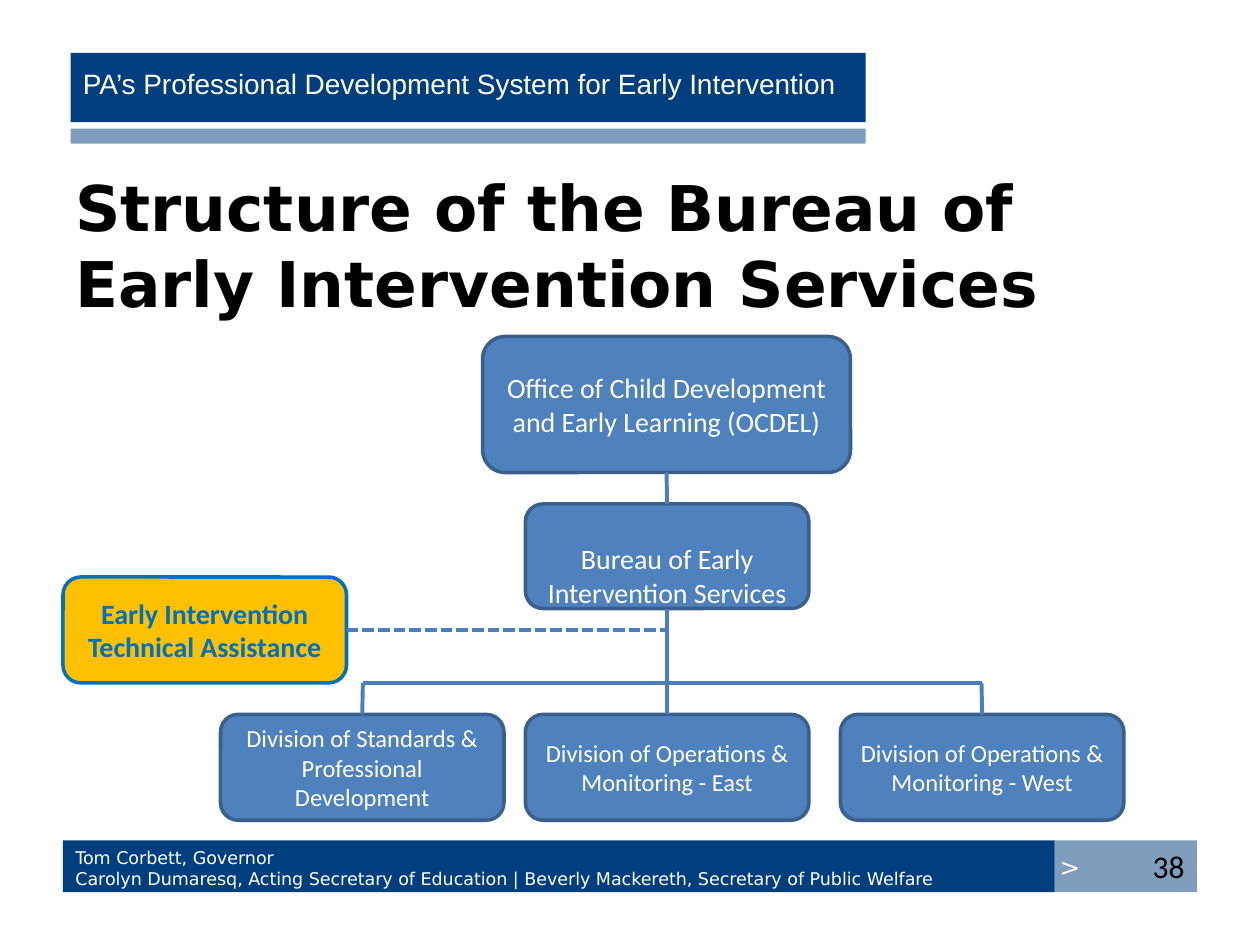
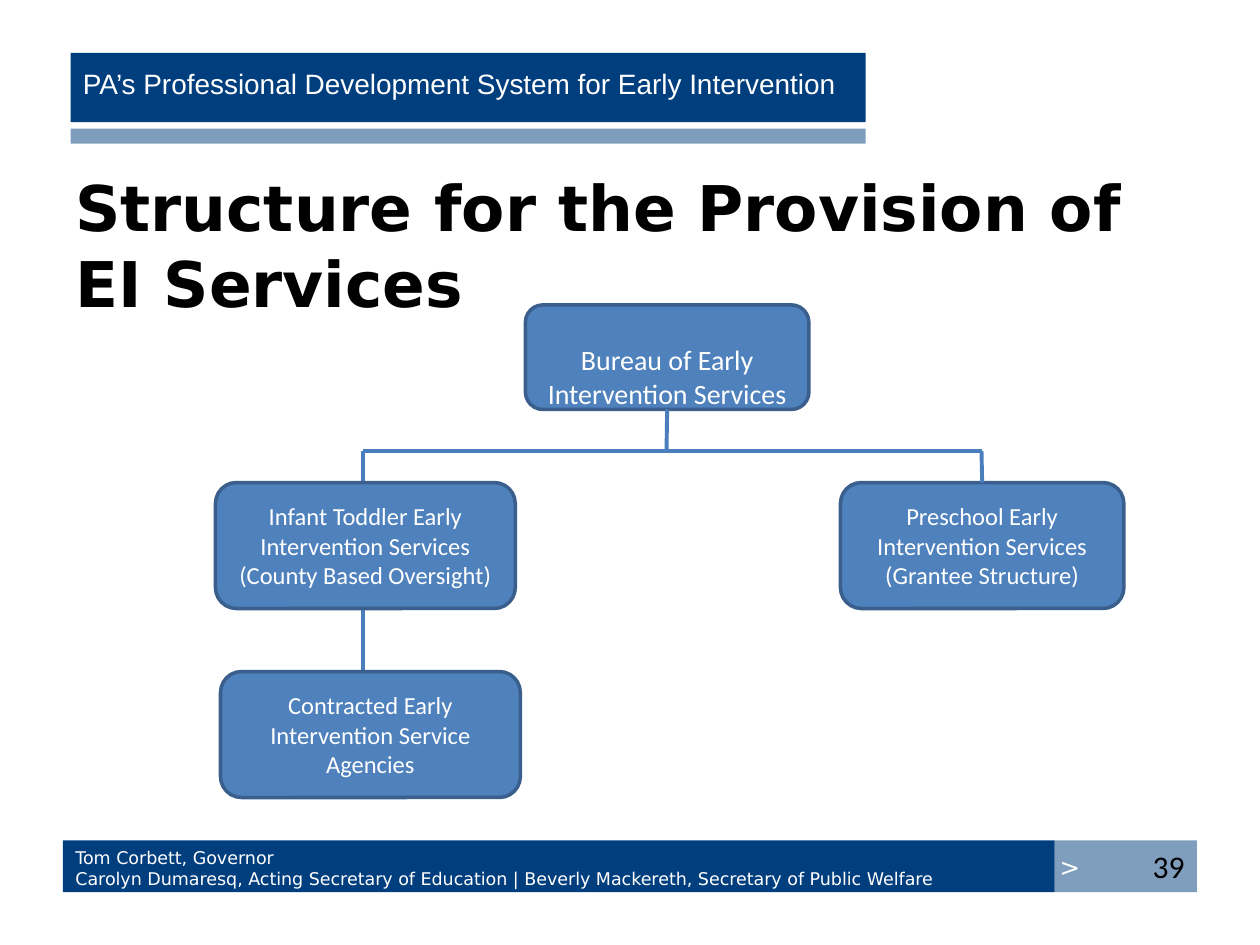
from lxml.etree import SubElement
from pptx import Presentation
from pptx.dml.color import RGBColor
from pptx.enum.dml import MSO_LINE as Dash
from pptx.enum.shapes import MSO_CONNECTOR as Link, MSO_SHAPE as Kind
from pptx.enum.text import MSO_ANCHOR as Anchor, PP_ALIGN as Align
from pptx.oxml.ns import qn
from pptx.util import Inches, Pt

NAVY = RGBColor(0x00, 0x3E, 0x7E)
BLUE = RGBColor(0x4F, 0x81, 0xBD)
EDGE = RGBColor(0x3A, 0x5F, 0x8C)
WIRE = RGBColor(0x4B, 0x7E, 0xBC)
GOLD = RGBColor(0xFF, 0xC0, 0x00)
AZURE = RGBColor(0x00, 0x70, 0xC0)
WHITE = RGBColor(0xFF, 0xFF, 0xFF)
BLACK = RGBColor(0x00, 0x00, 0x00)

BANNER = "PA’s Professional Development System for Early Intervention"
FOOTER = ("Tom Corbett, Governor\nCarolyn Dumaresq, Acting Secretary of Education"
          " | Beverly Mackereth, Secretary of Public Welfare")
BUREAU = "Bureau of Early Intervention Services"

WIDE = 2.25
LEFT, MID, RIGHT = 2.88, 5.29, 7.79


def write(frame, text, size=14, font="Calibri", color=WHITE, bold=False,
          align=Align.LEFT, anchor=Anchor.TOP, inset=(0.1, 0.05, 0.1, 0.05)):
    frame.word_wrap = True
    frame.vertical_anchor = anchor
    (frame.margin_left, frame.margin_top,
     frame.margin_right, frame.margin_bottom) = map(Inches, inset)
    para = frame.paragraphs[0]
    para.text = text
    para.alignment = align
    for run in para.runs:
        run.font.size = Pt(size)
        run.font.name = font
        run.font.bold = bold
        run.font.color.rgb = color


class Deck:
    sans = "DejaVu Sans"

    def __init__(self):
        self.show = Presentation()
        self.show.slide_width = Inches(10)
        self.show.slide_height = Inches(7.5)

    def page(self, title, number):
        self.slide = self.show.slides.add_slide(self.show.slide_layouts[6])
        self.band(0.56, 0.42, 6.31, 0.55)
        self.band(0.56, 1.02, 6.31, 0.12, 50)
        self.band(0.5, 6.67, 7.87, 0.41)
        self.band(8.37, 6.67, 1.13, 0.41, 50)
        self.text(8.25, 6.67, 1.25, 0.42, ">", font=self.sans,
                  anchor=Anchor.MIDDLE, inset=(0.16, 0.05, 0.1, 0.05))
        self.text(0.5, 6.67, 7.82, 0.44, FOOTER, size=10, font=self.sans)
        self.text(0.56, 0.48, 7.28, 0.37, BANNER, size=16, font="Arial")
        self.text(0.5, 1.25, 9, 1.17, title, size=36, font=self.sans,
                  color=BLACK, bold=True, inset=(0.1, 0.09, 0.1, 0.05))
        self.text(7.17, 6.67, 2.33, 0.4, str(number), size=18, color=BLACK,
                  align=Align.RIGHT)

    def shape(self, kind, x, y, w, h, fill):
        item = self.slide.shapes.add_shape(kind, *map(Inches, (x, y, w, h)))
        item.shadow.inherit = False
        item.fill.solid()
        item.fill.fore_color.rgb = fill
        return item

    def band(self, x, y, w, h, alpha=100):
        item = self.shape(Kind.RECTANGLE, x, y, w, h, NAVY)
        item.line.fill.background()
        if alpha < 100:
            tint = next(item.element.iter(qn("a:srgbClr")))
            SubElement(tint, qn("a:alpha"), val=str(alpha * 1000))

    def text(self, x, y, w, h, text, **style):
        item = self.slide.shapes.add_textbox(*map(Inches, (x, y, w, h)))
        write(item.text_frame, text, **style)

    def box(self, x, y, w, h, text, fill=BLUE, edge=EDGE, **style):
        item = self.shape(Kind.ROUNDED_RECTANGLE, x, y, w, h, fill)
        item.line.color.rgb = edge
        item.line.width = Pt(2)
        look = {"align": Align.CENTER, "anchor": Anchor.MIDDLE, **style}
        write(item.text_frame, text, **look)
        return item

    def bureau(self, y):
        return self.box(4.17, y, WIDE, 0.83, BUREAU, size=16,
                        inset=(0.1, 0.3, 0.1, 0))

    def line(self, x1, y1, x2, y2, head=None, tail=None, dash=None):
        item = self.slide.shapes.add_connector(
            Link.STRAIGHT, *map(Inches, (x1, y1, x2, y2)))
        if head:
            item.begin_connect(*head)
        if tail:
            item.end_connect(*tail)
        item.line.color.rgb = WIRE
        item.line.width = Pt(2.25)
        if dash:
            item.line.dash_style = dash
        SubElement(item.element.spPr, qn("a:effectLst"))


def draw_bureau(deck):
    deck.page("Structure of the Bureau of Early Intervention Services", 38)
    top, bus = 5.67, 5.42
    east, staff, west = [
        deck.box(x, top, WIDE, 0.84, "Division of " + name)
        for x, name in ((4.17, "Operations & Monitoring - East"),
                        (1.75, "Standards & Professional Development"),
                        (6.67, "Operations & Monitoring - West"))]
    aid = deck.box(0.5, 4.58, WIDE, 0.84, "Early Intervention Technical Assistance",
                   fill=GOLD, edge=AZURE, size=16, color=AZURE, bold=True)
    office = deck.box(3.83, 2.67, 2.92, 1.08,
                      "Office of Child Development and Early Learning (OCDEL)", size=16)
    bureau = deck.bureau(4)
    deck.line(MID, 3.75, MID, 4, (office, 2), (bureau, 0))
    deck.line(LEFT, bus, RIGHT, bus)
    deck.line(MID, 4.83, MID, top, (bureau, 2), (east, 0))
    for x, unit in ((LEFT, staff), (RIGHT, west)):
        deck.line(x, top, x, bus, (unit, 0))
    deck.line(2.75, 5, MID, 5, (aid, 3), dash=Dash.SQUARE_DOT)


def draw_service(deck):
    deck.page("Structure for the Provision of EI Services", 39)
    top, bus = 3.83, 3.58
    deck.line(LEFT, bus, LEFT, 5.58)
    deck.box(1.71, top, 2.38, 1,
             "Infant Toddler Early Intervention Services (County Based Oversight)")
    school = deck.box(6.67, top, WIDE, 1,
                      "Preschool Early Intervention Services (Grantee Structure)")
    bureau = deck.bureau(2.42)
    deck.line(LEFT, bus, RIGHT, bus)
    deck.line(MID, 3.25, MID, bus, (bureau, 2))
    deck.line(RIGHT, top, RIGHT, bus, (school, 0))
    deck.box(1.75, 5.33, 2.38, 1, "Contracted Early Intervention Service Agencies")


def main():
    deck = Deck()
    draw_bureau(deck)
    draw_service(deck)
    deck.show.save("out.pptx")


if __name__ == "__main__":
    main()
